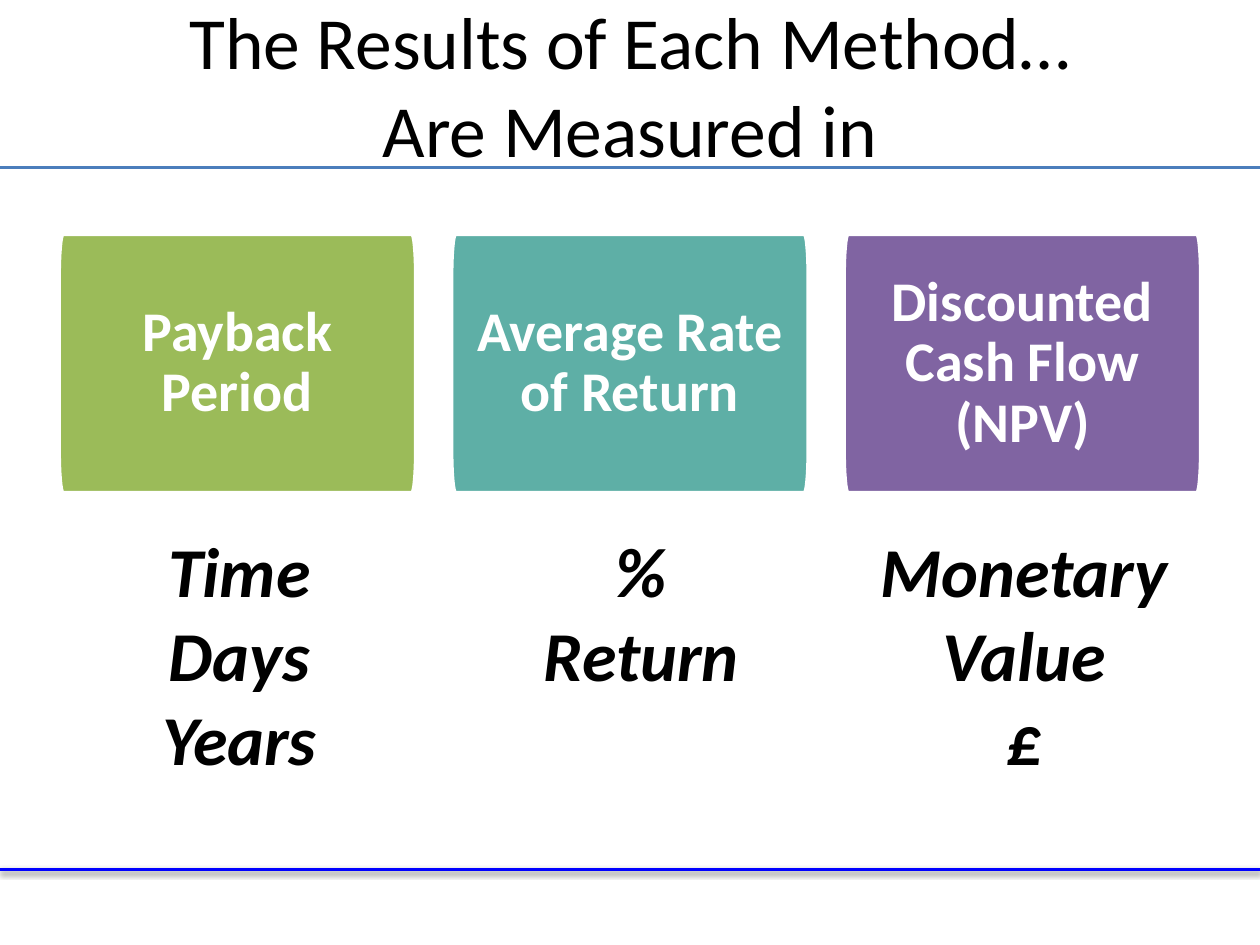
from math import cos, pi, sin

from lxml import etree
from pptx import Presentation
from pptx.dml.color import RGBColor
from pptx.enum.shapes import MSO_CONNECTOR as CONNECTOR
from pptx.enum.text import MSO_ANCHOR as ANCHOR, PP_ALIGN as ALIGN
from pptx.oxml import parse_xml
from pptx.oxml.ns import nsdecls, qn
from pptx.util import Inches, Pt

TITLE = "The Results of Each Method…\vAre Measured in"
# method, fill, left edge of the measures, measures
METHODS = [
    ("Payback Period", "9BBB59", 0.5, ["Time", "Days", "Years"]),
    ("Average Rate of Return", "5EAFA6", 3.69, ["%", "Return"]),
    ("Discounted Cash Flow (NPV)", "8064A2", 6.73, ["Monetary", "Value", "£"]),
]
# height on the slide, colour, width in points, has a shadow
RULES = [(6.9, "0000FF", 2, True), (1.33, "4B7EBC", 1.75, False)]

SLIDE_WIDTH, SLIDE_HEIGHT = 10, 7.5
CARD_LEFT, CARD_TOP, CARD_WIDTH, CARD_HEIGHT = 0.47, 1.86, 2.83, 2.05
CARD_STEP = 3.115
CORNER_WIDTH, CORNER_HEIGHT = 0.03, 0.34
MEASURE_TOP, MEASURE_WIDTH, MEASURE_LINE = 4.14, 2.8, 0.67
SHADOW = (
    f'<a:effectLst {nsdecls("a")}><a:outerShdw blurRad="40000" dist="20000" '
    'dir="5400000" rotWithShape="0"><a:srgbClr val="000000">'
    '<a:alpha val="38000"/></a:srgbClr></a:outerShdw></a:effectLst>'
)


def color(value):
    return RGBColor.from_string(value)


def write(shape, lines, size, fill="000000", bold=False, italic=False,
          anchor=ANCHOR.TOP, inset=None, spacing=None):
    frame = shape.text_frame
    frame.word_wrap = True
    frame.vertical_anchor = anchor
    if inset is not None:
        frame.margin_left = frame.margin_right = Inches(inset)
        frame.margin_top = frame.margin_bottom = Inches(inset)
    for index, line in enumerate(lines):
        paragraph = frame.add_paragraph() if index else frame.paragraphs[0]
        paragraph.text = line
        paragraph.alignment = ALIGN.CENTER
        if spacing:
            paragraph.line_spacing = spacing
        for run in paragraph.runs:
            font = run.font
            font.name, font.size = "Calibri", Pt(size)
            font.bold, font.italic = bold, italic
            font.color.rgb = color(fill)


def add_text(slide, left, top, width, height, lines, **text_format):
    box = slide.shapes.add_textbox(
        Inches(left), Inches(top), Inches(width), Inches(height))
    write(box, lines, **text_format)


def add_rule(slide, top, line_color, width, shadow):
    rule = slide.shapes.add_connector(
        CONNECTOR.STRAIGHT, 0, Inches(top), Inches(SLIDE_WIDTH), Inches(top))
    rule.line.color.rgb = color(line_color)
    rule.line.width = Pt(width)
    properties = rule._element.spPr
    if shadow:
        properties.append(parse_xml(SHADOW))
    else:
        etree.SubElement(properties, qn("a:effectLst"))


def card_outline(left, top, steps=8):
    """Points of a rectangle whose corners are tall, narrow quarter ellipses."""
    near_x, far_x = left + CORNER_WIDTH, left + CARD_WIDTH - CORNER_WIDTH
    near_y, far_y = top + CORNER_HEIGHT, top + CARD_HEIGHT - CORNER_HEIGHT
    centers = [(far_x, far_y), (near_x, far_y), (near_x, near_y), (far_x, near_y)]
    points = []
    for quarter, (x, y) in enumerate(centers):
        for step in range(steps + 1):
            angle = (quarter + step / steps) * pi / 2
            points.append((Inches(x + CORNER_WIDTH * cos(angle)),
                           Inches(y + CORNER_HEIGHT * sin(angle))))
    return points


def add_card(slide, left, fill, text):
    start, *others = card_outline(left, CARD_TOP)
    builder = slide.shapes.build_freeform(*start)
    builder.add_line_segments(others, close=True)
    card = builder.convert_to_shape()
    card.shadow.inherit = False
    card.fill.solid()
    card.fill.fore_color.rgb = color(fill)
    card.line.color.rgb = color("FFFFFF")
    card.line.width = Pt(2)
    write(card, [text], size=32, fill="FFFFFF", bold=True,
          anchor=ANCHOR.MIDDLE, inset=0.17, spacing=0.9)


def main():
    presentation = Presentation()
    presentation.slide_width = Inches(SLIDE_WIDTH)
    presentation.slide_height = Inches(SLIDE_HEIGHT)
    slide = presentation.slides.add_slide(presentation.slide_layouts[6])

    for rule in RULES:
        add_rule(slide, *rule)
    add_text(slide, 0.5, 0.08, 9, 1.17, [TITLE], size=42, anchor=ANCHOR.MIDDLE)
    for index, (method, fill, measure_left, measures) in enumerate(METHODS):
        add_card(slide, CARD_LEFT + index * CARD_STEP, fill, method)
        add_text(slide, measure_left, MEASURE_TOP, MEASURE_WIDTH,
                 0.1 + MEASURE_LINE * len(measures), measures,
                 size=40, bold=True, italic=True)

    presentation.save("out.pptx")


if __name__ == "__main__":
    main()
